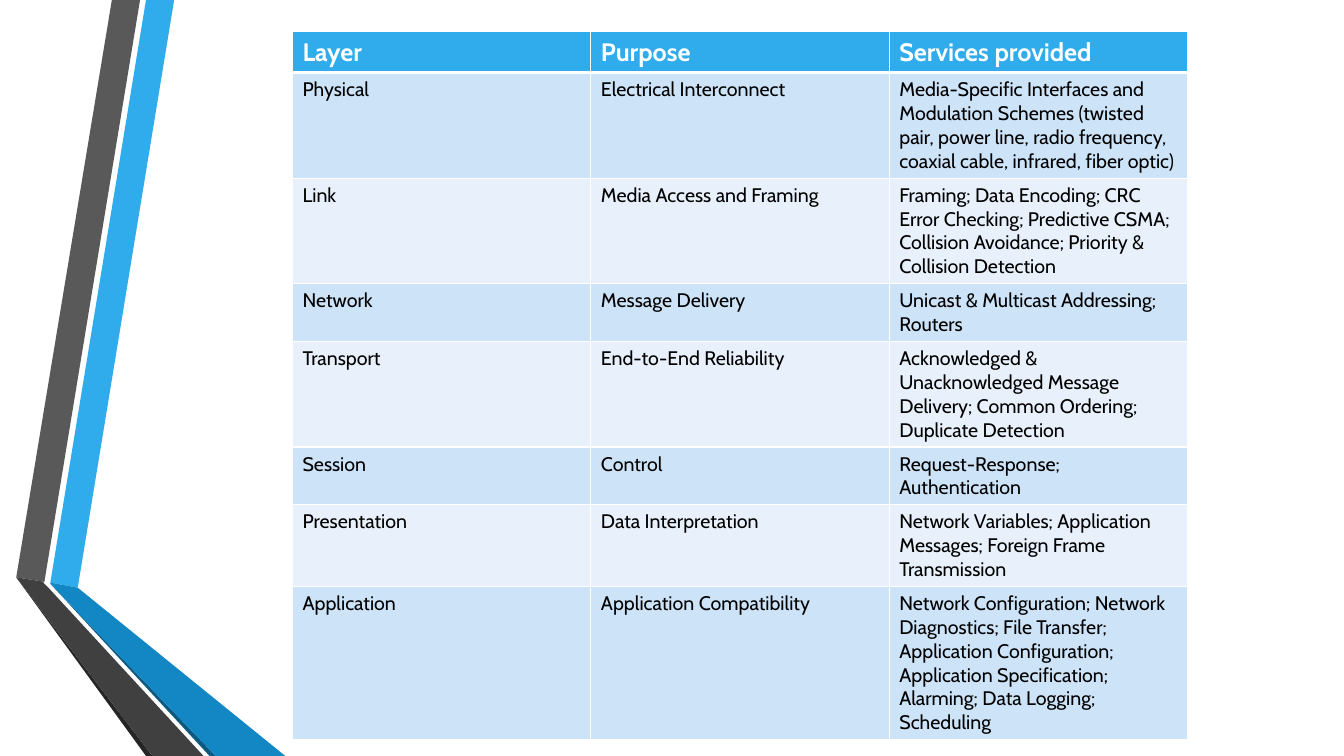
from lxml import etree
from pptx import Presentation
from pptx import util as u
from pptx.dml.color import RGBColor
from pptx.oxml import ns

COLORS = {
    "white": "FFFFFF", "black": "000000",
    "sky": "30ACEC", "blue": "1287C3", "navy": "0C5A82",
    "gray": "595959", "charcoal": "404040", "ink": "262626",
    "odd_row": "CDE3F8", "even_row": "E8F1FB",
}
PAGE_WIDTH, PAGE_HEIGHT = 33.87, 19.05

# Ribbon outlines in centimetres, from back to front
RIBBONS = [
    ("sky", [(1.27, 14.68), (1.96, 14.81), (4.39, 0), (3.68, 0)]),
    ("gray", [(3.53, 0), (2.82, 0), (0.41, 14.55), (1.12, 14.66)]),
    ("ink", [(0.41, 14.55), (3.68, PAGE_HEIGHT), (3.84, PAGE_HEIGHT)]),
    ("navy", [(1.27, 14.71), (5.28, PAGE_HEIGHT), (5.44, PAGE_HEIGHT)]),
    ("blue", [(1.27, 14.71), (5.44, PAGE_HEIGHT), (7.19, PAGE_HEIGHT),
              (1.96, 14.81), (1.27, 14.68)]),
    ("charcoal", [(5.13, PAGE_HEIGHT), (1.22, 14.81), (1.09, 14.68),
                  (1.12, 14.66), (0.41, 14.55), (3.84, PAGE_HEIGHT)]),
]

LAYERS = [
    ("Layer", "Purpose", "Services provided"),
    ("Physical", "Electrical Interconnect",
     "Media-Specific Interfaces and Modulation Schemes (twisted pair, "
     "power line, radio frequency, coaxial cable, infrared, fiber optic)"),
    ("Link", "Media Access and Framing",
     "Framing; Data Encoding; CRC Error Checking; Predictive CSMA; "
     "Collision Avoidance; Priority & Collision Detection"),
    ("Network", "Message Delivery", "Unicast & Multicast Addressing; Routers"),
    ("Transport", "End-to-End Reliability",
     "Acknowledged & Unacknowledged Message Delivery; Common Ordering; "
     "Duplicate Detection"),
    ("Session", "Control", "Request-Response; Authentication"),
    ("Presentation", "Data Interpretation",
     "Network Variables; Application Messages; Foreign Frame Transmission"),
    ("Application", "Application Compatibility",
     "Network Configuration; Network Diagnostics; File Transfer; "
     "Application Configuration; Application Specification; Alarming; "
     "Data Logging; Scheduling"),
]


def write(frame, text, size=14, color="black", bold=False):
    span = frame.paragraphs[0].add_run()
    span.text = text
    span.font.name = "Cabin"
    span.font.size = u.Pt(size)
    span.font.bold = bold
    span.font.color.rgb = RGBColor.from_string(COLORS[color])


def add_border(cell, side, points):
    """Draw a white line on one side (L, R, T or B) of a table cell."""
    line = etree.SubElement(cell._tc.get_or_add_tcPr(), ns.qn(f"a:ln{side}"),
                            w=str(u.Pt(points)))
    fill = etree.SubElement(line, ns.qn("a:solidFill"))
    etree.SubElement(fill, ns.qn("a:srgbClr"), val=COLORS["white"])


deck = Presentation()
deck.slide_width, deck.slide_height = u.Cm(PAGE_WIDTH), u.Cm(PAGE_HEIGHT)
page = deck.slides.add_slide(deck.slide_layouts[6])

for color, outline in RIBBONS:
    corners = [(u.Cm(x), u.Cm(y)) for x, y in outline]
    builder = page.shapes.build_freeform(*corners[0])
    builder.add_line_segments(corners[1:], close=True)
    ribbon = builder.convert_to_shape()
    ribbon.shadow.inherit = False
    ribbon.fill.solid()
    ribbon.fill.fore_color.rgb = RGBColor.from_string(COLORS[color])
    ribbon.line.fill.background()

row_height, column_width = 1.03, 7.52
table = page.shapes.add_table(
    len(LAYERS), 3, u.Cm(7.37), u.Cm(0.8),
    u.Cm(3 * column_width), u.Cm(len(LAYERS) * row_height)).table
for column in table.columns:
    column.width = u.Cm(column_width)

for r, layer in enumerate(LAYERS):
    table.rows[r].height = u.Cm(row_height)
    shade = "sky" if r == 0 else "odd_row" if r % 2 else "even_row"
    for c, words in enumerate(layer):
        cell = table.cell(r, c)
        if r == 0:
            write(cell.text_frame, words, size=18, color="white", bold=True)
        else:
            write(cell.text_frame, words)
        for side in "LRTB":
            under_header = (r, side) in [(0, "B"), (1, "T")]
            add_border(cell, side, 3 if under_header else 1)
        cell.fill.solid()
        cell.fill.fore_color.rgb = RGBColor.from_string(COLORS[shade])

deck.save("out.pptx")
